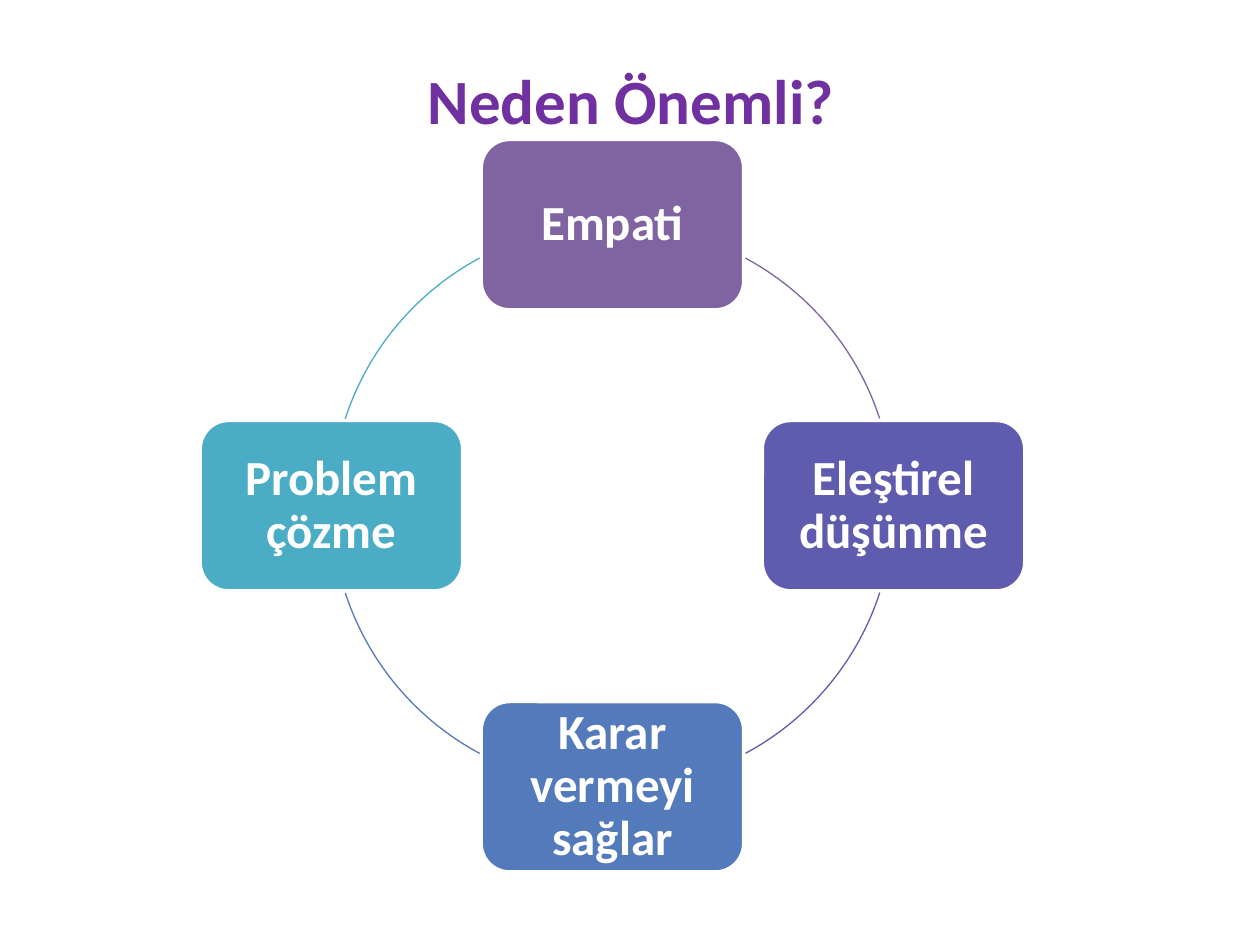
"""Build a slide with a cycle of four reasons around a ring."""
from dataclasses import dataclass
from math import cos, radians, sin

from pptx import Presentation
from pptx.dml.color import RGBColor
from pptx.enum.shapes import MSO_SHAPE as Shape
from pptx.enum.text import MSO_ANCHOR as Anchor, PP_ALIGN as Align
from pptx.slide import Slide
from pptx.text.text import TextFrame
from pptx.util import Pt

WHITE = RGBColor(0xFF, 0xFF, 0xFF)
TITLE_PURPLE = RGBColor(0x70, 0x30, 0xA0)
PURPLE = RGBColor(0x80, 0x64, 0xA2)
INDIGO = RGBColor(0x5F, 0x5B, 0xAE)
BLUE = RGBColor(0x53, 0x7A, 0xBA)
TEAL = RGBColor(0x4B, 0xAC, 0xC6)

CENTER_X, CENTER_Y, RADIUS = 350, 289, 160.6
BOX_WIDTH, BOX_HEIGHT, BOX_INSET = 150, 97.4, 13.4
DEGREES_TO_ADJUSTMENT = 0.6


@dataclass(frozen=True)
class Reason:
    label: str
    color: RGBColor
    angle: int
    arc_start: float
    arc_end: float


REASONS = (
    Reason("Empati", PURPLE, 270, 298.2, 342),
    Reason("Eleştirel düşünme", INDIGO, 0, 18, 61.8),
    Reason("Karar vermeyi sağlar", BLUE, 90, 118.2, 162),
    Reason("Problem çözme", TEAL, 180, 198, 241.8),
)


def write_text(frame: TextFrame, text: str, size: int, color: RGBColor) -> None:
    """Write one bold, centred line of thought into a frame."""
    frame.word_wrap = True
    frame.vertical_anchor = Anchor.MIDDLE
    para = frame.paragraphs[0]
    para.alignment = Align.CENTER
    span = para.add_run()
    span.text = text
    span.font.name = "Calibri"
    span.font.size = Pt(size)
    span.font.bold = True
    span.font.color.rgb = color


def add_box(page: Slide, reason: Reason) -> None:
    """Place a reason's rounded box on the ring."""
    angle = radians(reason.angle)
    left = CENTER_X + RADIUS * cos(angle) - BOX_WIDTH / 2
    top = CENTER_Y + RADIUS * sin(angle) - BOX_HEIGHT / 2
    box = page.shapes.add_shape(
        Shape.ROUNDED_RECTANGLE, Pt(left), Pt(top), Pt(BOX_WIDTH), Pt(BOX_HEIGHT)
    )
    box.shadow.inherit = False
    box.fill.solid()
    box.fill.fore_color.rgb = reason.color
    box.line.color.rgb = WHITE
    box.line.width = Pt(2)
    frame = box.text_frame
    frame.margin_left = frame.margin_right = Pt(BOX_INSET)
    frame.margin_top = frame.margin_bottom = Pt(BOX_INSET)
    write_text(frame, reason.label, 28, WHITE)
    frame.paragraphs[0].line_spacing = 0.9


def add_arc(page: Slide, reason: Reason) -> None:
    """Draw the part of the ring that follows a reason."""
    arc = page.shapes.add_shape(
        Shape.ARC, Pt(CENTER_X - RADIUS), Pt(CENTER_Y - RADIUS),
        Pt(2 * RADIUS), Pt(2 * RADIUS),
    )
    arc.adjustments[0] = reason.arc_start * DEGREES_TO_ADJUSTMENT
    arc.adjustments[1] = reason.arc_end * DEGREES_TO_ADJUSTMENT
    arc.shadow.inherit = False
    arc.fill.background()
    arc.line.color.rgb = reason.color
    arc.line.width = Pt(0.75)


def main() -> None:
    """Assemble the slide and save it."""
    deck = Presentation()
    deck.slide_width, deck.slide_height = Pt(720), Pt(540)
    page = deck.slides.add_slide(deck.slide_layouts[5])
    title = page.shapes.title
    title.left, title.top, title.width, title.height = Pt(31), Pt(24), Pt(659), Pt(65)
    write_text(title.text_frame, "Neden Önemli?", 36, TITLE_PURPLE)
    for reason in REASONS:
        add_box(page, reason)
        add_arc(page, reason)
    deck.save("out.pptx")


if __name__ == "__main__":
    main()
